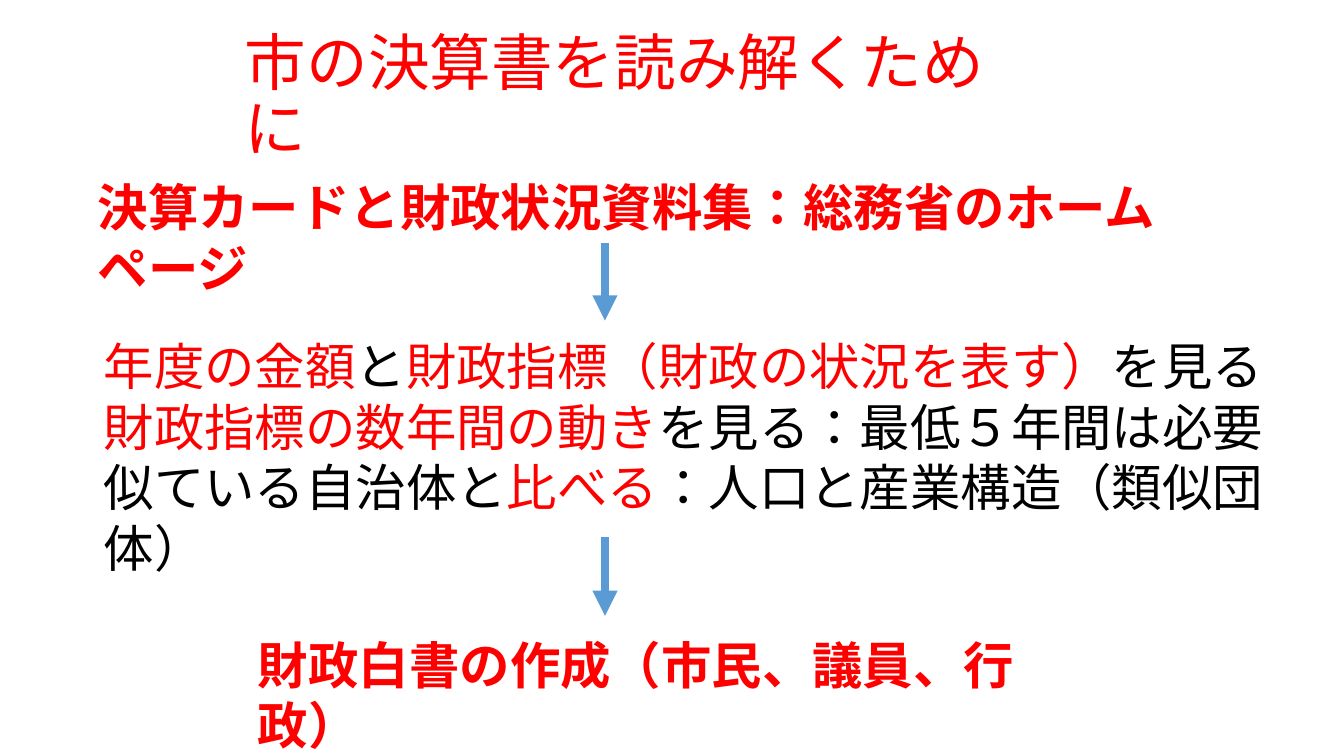
from dataclasses import dataclass

from lxml.etree import SubElement
from pptx import Presentation
from pptx.dml.color import RGBColor
from pptx.enum.lang import MSO_LANGUAGE_ID
from pptx.enum.shapes import MSO_CONNECTOR
from pptx.enum.text import MSO_ANCHOR, MSO_AUTO_SIZE
from pptx.oxml.ns import qn
from pptx.util import Inches, Pt


@dataclass(frozen=True)
class Theme:
    font: str = "Calibri"
    title_size: Pt = Pt(44)
    body_size: Pt = Pt(36)
    arrow_width: Pt = Pt(6)
    red: RGBColor = RGBColor(0xFF, 0x00, 0x00)
    black: RGBColor = RGBColor(0x00, 0x00, 0x00)
    blue: RGBColor = RGBColor(0x5B, 0x9B, 0xD5)


theme = Theme()


def add_text(page, left, top, width, height, lines, size, bold=False):
    """Add a text box; each line is a list of (text, colour) spans."""
    box = page.shapes.add_textbox(Inches(left), Inches(top), Inches(width), Inches(height))
    frame = box.text_frame
    frame.word_wrap = True
    for index, spans in enumerate(lines):
        para = frame.paragraphs[0] if index == 0 else frame.add_paragraph()
        para.font.name = theme.font
        para.font.size = size
        para.font.bold = bold
        for text, color in spans:
            span = para.add_run()
            span.text = text
            span.font.color.rgb = color
            span.font.language_id = MSO_LANGUAGE_ID.JAPANESE
    return frame


deck = Presentation()
deck.slide_width = Inches(13.33)
deck.slide_height = Inches(7.5)
page = deck.slides.add_slide(deck.slide_layouts[6])

title = add_text(page, 2.33, 0.25, 7.89, 1.45,
                 [[("市の決算書を読み解くために", theme.red)]], theme.title_size)
title.vertical_anchor = MSO_ANCHOR.MIDDLE
title.paragraphs[0].line_spacing = 0.9

sources = [[("決算カードと財政状況資料集：総務省のホームページ", theme.red)]]
reading_steps = [
    [("年度の金額", theme.red), ("と", theme.black),
     ("財政指標（財政の状況を表す）", theme.red), ("を見る", theme.black)],
    [("財政指標の数年間の動き", theme.red), ("を見る：最低５年間は必要", theme.black)],
    [("似ている自治体と", theme.black), ("比べる", theme.red),
     ("：人口と産業構造（類似団体）", theme.black)],
]
white_paper = [[("財政白書の作成（市民、議員、行政）", theme.red)]]

for left, top, width, height, lines, bold in (
    (0.87, 1.7, 11.56, 0.71, sources, True),
    (0.93, 3.28, 12.07, 1.92, reading_steps, False),
    (2.46, 6.24, 8.02, 0.71, white_paper, True),
):
    frame = add_text(page, left, top, width, height, lines, theme.body_size, bold)
    frame.auto_size = MSO_AUTO_SIZE.SHAPE_TO_FIT_TEXT

for start, end in ((2.41, 3.18), (5.33, 6.11)):
    arrow = page.shapes.add_connector(
        MSO_CONNECTOR.STRAIGHT, Inches(6), Inches(start), Inches(6), Inches(end))
    arrow.line.color.rgb = theme.blue
    arrow.line.width = theme.arrow_width
    SubElement(arrow.line._get_or_add_ln(), qn("a:tailEnd"), type="triangle")
    SubElement(arrow._element.spPr, qn("a:effectLst"))

deck.save("out.pptx")
